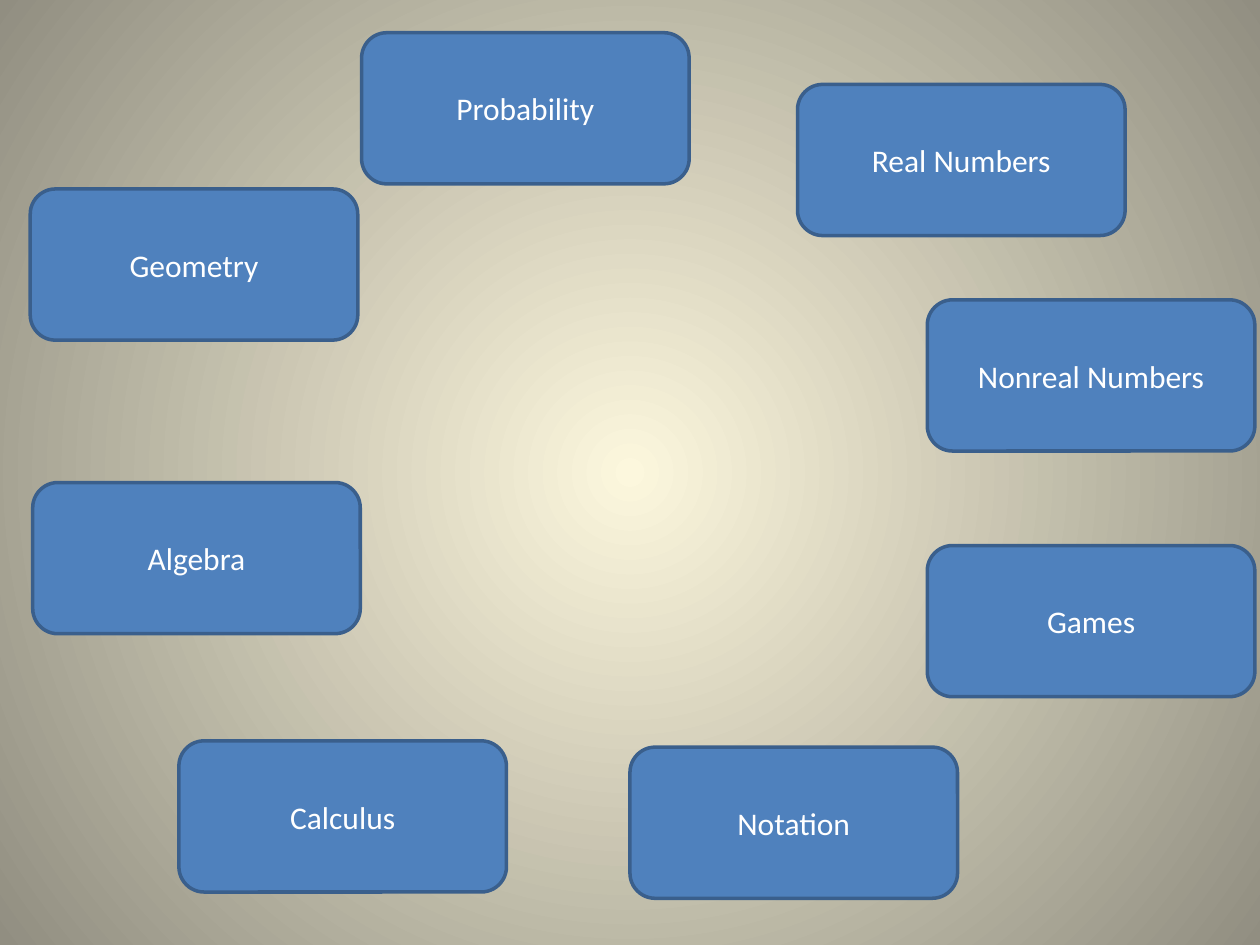
from lxml import etree
from pptx import Presentation
from pptx.dml.color import RGBColor
from pptx.enum import shapes, text
from pptx.oxml.ns import qn
from pptx.util import Inches, Pt

TOPICS = [
    ("Geometry", 0.24, 1.5),
    ("Algebra", 0.26, 3.83),
    ("Calculus", 1.42, 5.88),
    ("Real Numbers", 6.33, 0.67),
    ("Nonreal Numbers", 7.36, 2.38),
    ("Games", 7.36, 4.33),
    ("Probability", 2.87, 0.26),
    ("Notation", 5, 5.93),
]
CARD_W, CARD_H = 2.6, 1.2
BLUE = RGBColor(0x4F, 0x81, 0xBD)
DARK_BLUE = RGBColor(0x3A, 0x5F, 0x8C)
WHITE = RGBColor(0xFF, 0xFF, 0xFF)
CREAM = RGBColor(0xFC, 0xF7, 0xDD)
TAUPE = RGBColor(0x91, 0x8E, 0x81)


def set_background(s):
    fill = s.background.fill
    fill.gradient()
    for stop, color, position in zip(fill.gradient_stops, (CREAM, TAUPE), (0, 1)):
        stop.color.rgb = color
        stop.position = position
    grad = next(s.element.iter(qn("a:gradFill")))
    grad.remove(grad.find(qn("a:lin")))
    circle = etree.SubElement(grad, qn("a:path"), {"path": "circle"})
    etree.SubElement(circle, qn("a:fillToRect"), dict.fromkeys("ltrb", "50000"))


def add_card(s, label, left, top):
    sp = s.shapes.add_shape(
        shapes.MSO_SHAPE.ROUNDED_RECTANGLE,
        Inches(left), Inches(top), Inches(CARD_W), Inches(CARD_H))
    sp.shadow.inherit = False
    sp.fill.solid()
    sp.fill.fore_color.rgb = BLUE
    sp.line.color.rgb = DARK_BLUE
    sp.line.width = Pt(2)
    tf = sp.text_frame
    tf.word_wrap = True
    tf.vertical_anchor = text.MSO_ANCHOR.MIDDLE
    p = tf.paragraphs[0]
    p.text = label
    p.alignment = text.PP_ALIGN.CENTER
    p.font.name = "Calibri"
    p.font.size = Pt(18)
    p.font.color.rgb = WHITE


prs = Presentation()
prs.slide_width, prs.slide_height = Inches(10), Inches(7.5)
s = prs.slides.add_slide(prs.slide_layouts[6])
set_background(s)
for topic in TOPICS:
    add_card(s, *topic)
prs.save("out.pptx")
